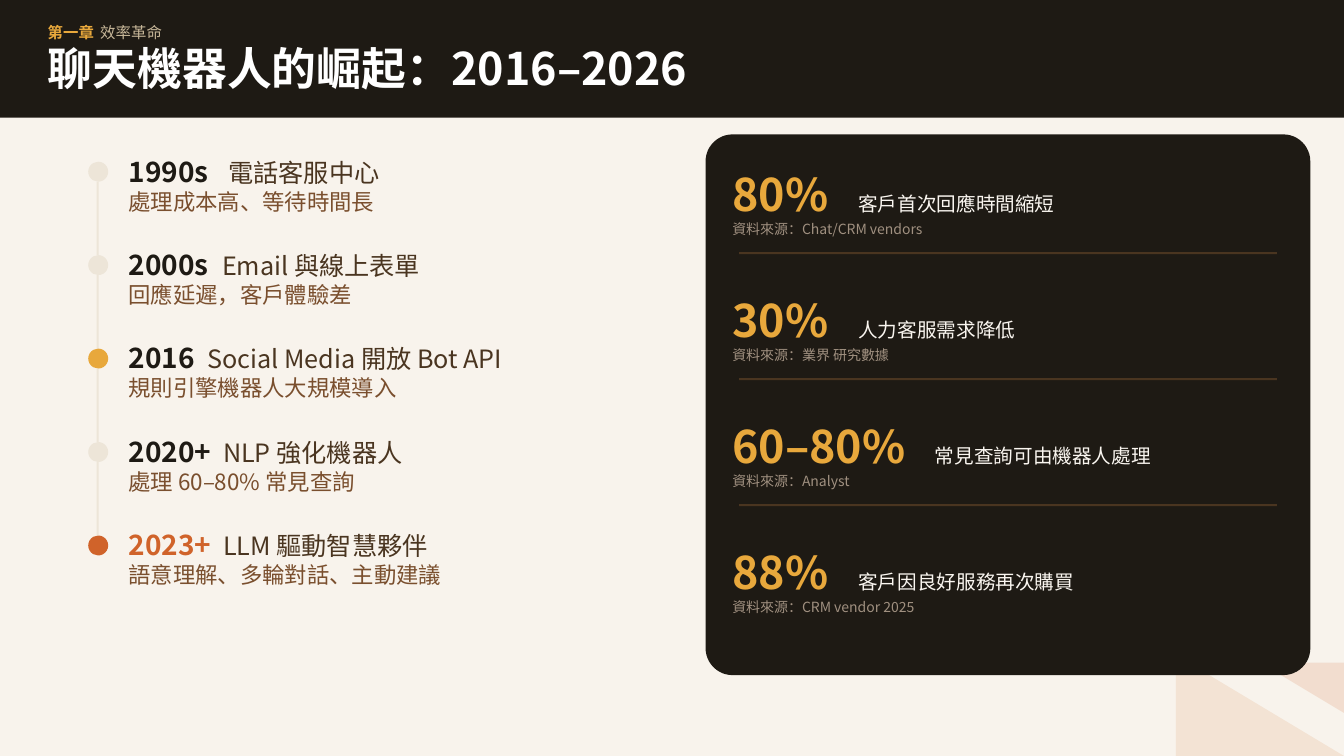
from lxml.etree import SubElement
from pptx import Presentation
from pptx.dml.color import RGBColor
from pptx.enum.shapes import MSO_SHAPE as SHAPE
from pptx.enum.text import MSO_ANCHOR as ANCHOR
from pptx.oxml.ns import qn
from pptx.util import Pt

PX = 9525
FONT = "Noto Sans CJK SC"
CREAM = RGBColor(0xF8, 0xF3, 0xEC)
INK = RGBColor(0x1E, 0x1A, 0x14)
AMBER = RGBColor(0xE8, 0xA8, 0x3C)
ORANGE = RGBColor(0xD4, 0x72, 0x2A)
RUST = RGBColor(0xD0, 0x63, 0x2A)
SAND = RGBColor(0xED, 0xE5, 0xD8)
TAN = RGBColor(0xC8, 0xB8, 0x9A)
BROWN = RGBColor(0x4A, 0x35, 0x20)
SIENNA = RGBColor(0x7A, 0x4F, 0x2E)
IVORY = RGBColor(0xFA, 0xF6, 0xF0)
TAUPE = RGBColor(0xA0, 0x90, 0x80)
WHITE = RGBColor(0xFF, 0xFF, 0xFF)

prs = Presentation()
prs.slide_width, prs.slide_height = 1280 * PX, 720 * PX
slide = prs.slides.add_slide(prs.slide_layouts[6])
slide.background.fill.solid()
slide.background.fill.fore_color.rgb = CREAM


def add_block(kind, box, color, opacity=100):
    block = slide.shapes.add_shape(kind, *[n * PX for n in box])
    block.shadow.inherit = False
    block.fill.solid()
    block.fill.fore_color.rgb = color
    block.line.fill.background()
    if opacity < 100:
        rgb = block.fill._xPr.find(qn("a:solidFill"))[0]
        SubElement(rgb, qn("a:alpha"), val=str(opacity * 1000))
    return block


def add_lines(box, lines, tab, anchor=ANCHOR.TOP):
    frame = slide.shapes.add_textbox(*[n * PX for n in box]).text_frame
    frame.word_wrap = True
    frame.vertical_anchor = anchor
    for i, line in enumerate(lines):
        paragraph = frame.add_paragraph() if i else frame.paragraphs[0]
        if len(line) > 1:
            tabs = SubElement(paragraph._p.get_or_add_pPr(), qn("a:tabLst"))
            SubElement(tabs, qn("a:tab"), pos=str(tab * PX), algn="l")
        for text, size, color, bold in line:
            run = paragraph.add_run()
            run.text = text
            font = run.font if len(line) > 1 else paragraph.font
            font.name = FONT
            SubElement(font._rPr, qn("a:ea"), typeface=FONT)
            font.size, font.bold = Pt(size), bold
            font.color.rgb = color


add_block(SHAPE.RIGHT_TRIANGLE, (1120, 624, 160, 96), ORANGE, 12)
corner = add_block(SHAPE.RIGHT_TRIANGLE, (1200, 631, 80, 48), RUST, 15)
corner.rotation = 180

add_block(SHAPE.RECTANGLE, (0, 0, 1280, 112), INK)
add_lines((36, 12, 1176, 88), [
    [("第一章\t", 11, AMBER, True), ("效率革命", 11, TAN, False)],
    [("聊天機器人的崛起：2016–2026", 32, WHITE, True)],
], 50, ANCHOR.MIDDLE)

milestones = [
    ("1990s", "電話客服中心", "處理成本高、等待時間長", SAND, INK, 95),
    ("2000s", "Email 與線上表單", "回應延遲，客戶體驗差", SAND, INK, 89),
    ("2016", "Social Media 開放 Bot API", "規則引擎機器人大規模導入", AMBER, INK, 75),
    ("2020+", "NLP 強化機器人", "處理 60–80% 常見查詢", SAND, INK, 90),
    ("2023+", "LLM 驅動智慧夥伴", "語意理解、多輪對話、主動建議", RUST, RUST, 90),
]
for i, (year, event, detail, dot_color, year_color, tab) in enumerate(milestones):
    top = 154 + 89 * i
    add_block(SHAPE.OVAL, (84, top, 19, 19), dot_color)
    if i < len(milestones) - 1:
        add_block(SHAPE.RECTANGLE, (92, top + 19, 2, 70), SAND)
    add_lines((113, top - 12, 504, 80), [
        [(year + "\t", 20, year_color, True), (event, 18, BROWN, False)],
        [(detail, 16, SIENNA, False)],
    ], tab)

panel = add_block(SHAPE.ROUNDED_RECTANGLE, (672, 128, 576, 515), INK)
panel.adjustments[0] = 0.05

stats = [
    ("80%", "客戶首次回應時間縮短", "Chat/CRM vendors", 120),
    ("30%", "人力客服需求降低", "業界 研究數據", 120),
    ("60–80%", "常見查詢可由機器人處理", "Analyst", 193),
    ("88%", "客戶因良好服務再次購買", "CRM vendor 2025", 120),
]
for i, (figure, meaning, source, tab) in enumerate(stats):
    top = 144 + 120 * i
    add_lines((688, top, 544, 96), [
        [(figure + "\t", 32, AMBER, True), (meaning, 14, IVORY, False)],
        [("資料來源：" + source, 10, TAUPE, False)],
    ], tab, ANCHOR.MIDDLE)
    if i < len(stats) - 1:
        add_block(SHAPE.RECTANGLE, (704, top + 96, 512, 2), BROWN)

prs.save("out.pptx")
